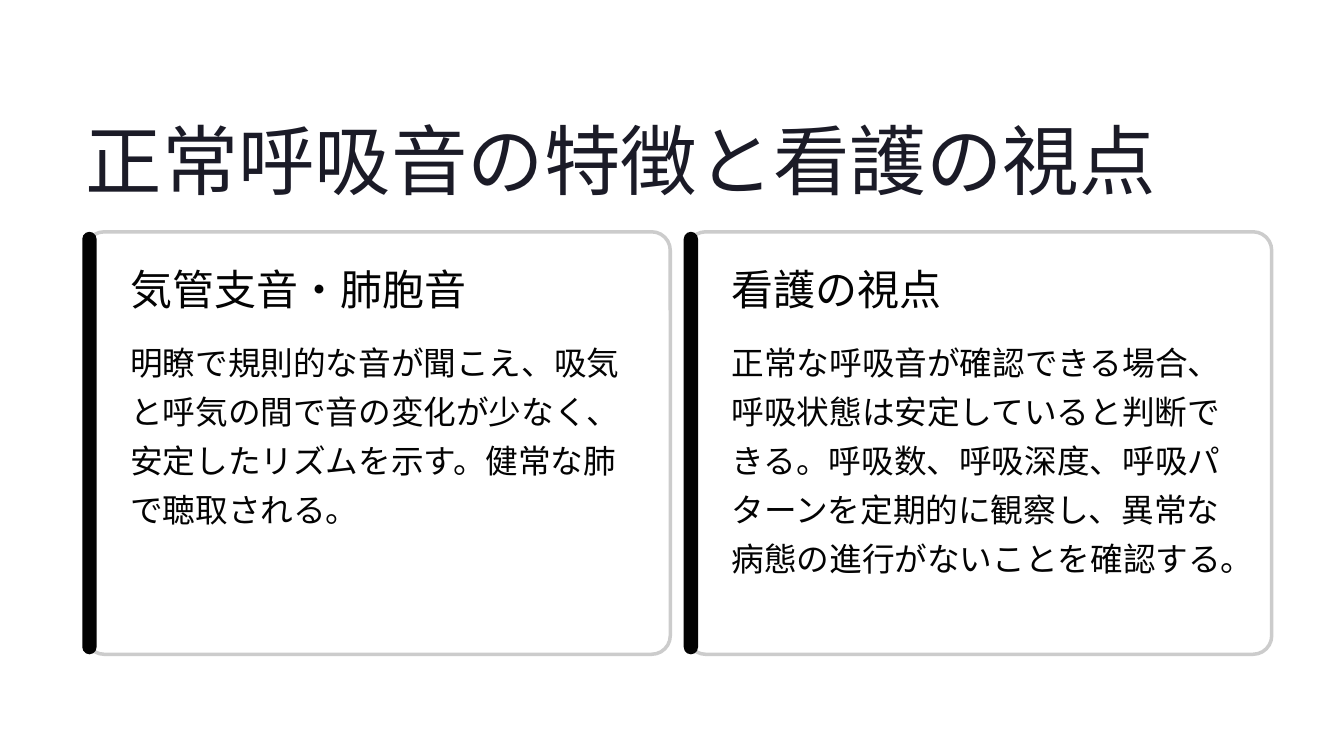
from lxml.etree import SubElement
from pptx import Presentation
from pptx.dml.color import RGBColor
from pptx.enum.shapes import MSO_SHAPE
from pptx.oxml.ns import qn
from pptx.util import Inches, Pt

# Content
TITLE = "正常呼吸音の特徴と看護の視点"
CARDS = [
    ("気管支音・肺胞音",
     "明瞭で規則的な音が聞こえ、吸気と呼気の間で音の変化が少なく、"
     "安定したリズムを示す。健常な肺で聴取される。", 2.6),
    ("看護の視点",
     "正常な呼吸音が確認できる場合、呼吸状態は安定していると判断できる。"
     "呼吸数、呼吸深度、呼吸パターンを定期的に観察し、"
     "異常な病態の進行がないことを確認する。", 3.25),
]
INK, TITLE_INK, PAPER, BORDER = "030303", "1B1B27", "FFFFFF", "CCCCCC"

# Grid, in inches
SLIDE_W, SLIDE_H = 16, 9
MARGIN, GAP = 1.02, 0.2
CARD_TOP, CARD_W, CARD_H = 2.76, 6.96, 5.03
BAR_W, BAR_SHIFT = 0.17, 0.04
TEXT_INDENT, TEXT_W = 0.53, 6


def color(hex_value):
    return RGBColor.from_string(hex_value)


def add_rounded(slide, left, width, radius, fill):
    shape = slide.shapes.add_shape(
        MSO_SHAPE.ROUNDED_RECTANGLE, Inches(left), Inches(CARD_TOP),
        Inches(width), Inches(CARD_H))
    shape.adjustments[0] = radius
    shape.shadow.inherit = False
    shape.fill.solid()
    shape.fill.fore_color.rgb = color(fill)
    shape.line.fill.background()
    return shape


def add_text(slide, text, box, size, leading, font, ink=INK, wrap=False):
    frame = slide.shapes.add_textbox(*map(Inches, box)).text_frame
    frame.margin_left = frame.margin_right = 0
    frame.margin_top = frame.margin_bottom = 0
    frame.word_wrap = wrap
    paragraph = frame.paragraphs[0]
    paragraph.line_spacing = Pt(leading)
    run = paragraph.add_run()
    run.text = text
    run.font.name = font
    run.font.size = Pt(size)
    run.font.color.rgb = color(ink)


def add_card(slide, left, heading, body, body_height):
    # Panel with a slightly transparent fill
    panel = add_rounded(slide, left, CARD_W, 0.044, PAPER)
    panel.line.color.rgb = color(BORDER)
    panel.line.width = Pt(3)
    fill_color = panel.fill._xPr.find(qn("a:solidFill"))[0]
    SubElement(fill_color, qn("a:alpha"), val="95000")

    # Accent bar on the left edge
    add_rounded(slide, left - BAR_SHIFT, BAR_W, 0.5, INK)

    # Heading and body
    text_left = left + TEXT_INDENT
    add_text(slide, heading, (text_left, 3.17, 4.68, 0.63), 36, 41, "Inter")
    add_text(slide, body, (text_left, 3.96, TEXT_W, body_height),
             28, 42, "Karla", wrap=True)


def main():
    deck = Presentation()
    deck.slide_width, deck.slide_height = Inches(SLIDE_W), Inches(SLIDE_H)
    slide = deck.slides.add_slide(deck.slide_layouts[6])

    add_text(slide, TITLE, (MARGIN, 1.3, 12.78, 1.14),
             65.5, 82, "Inter", TITLE_INK)
    for column, card in enumerate(CARDS):
        add_card(slide, MARGIN + column * (CARD_W + GAP), *card)

    deck.save("out.pptx")


if __name__ == "__main__":
    main()
